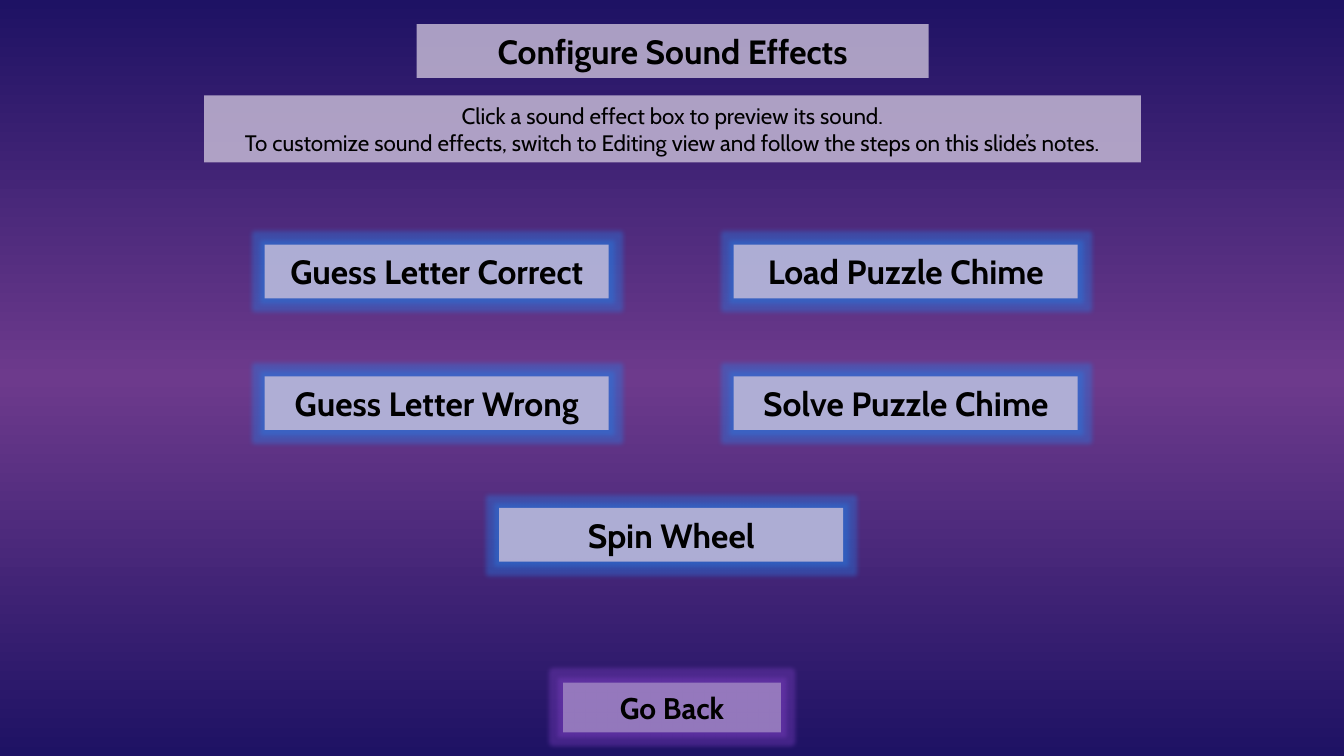
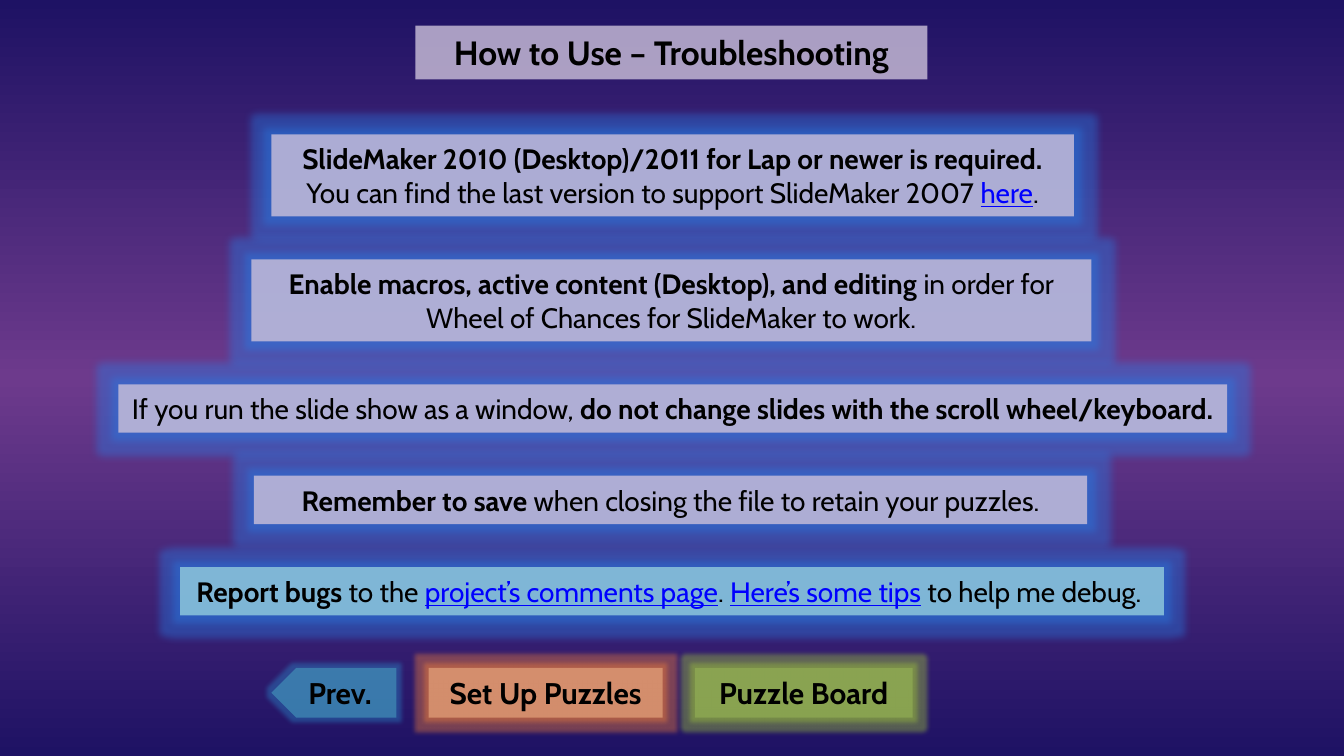
from lxml.etree import SubElement
from pptx import Presentation
from pptx.dml.color import RGBColor
from pptx.enum.shapes import MSO_SHAPE
from pptx.enum.text import MSO_ANCHOR, MSO_AUTO_SIZE, PP_ALIGN
from pptx.oxml.ns import qn
from pptx.util import Inches, Pt

FONT = "Cabin"
COLORS = {
    "night": "1E1264", "plum": "6D3A8C",
    "lilac": "CCC1DA", "sky": "93CDDD", "teal": "4BACC6",
    "peach": "FAC090", "green": "9BBB59",
    "text": "000000", "link": "0000FF",
    "blue_glow": "267DE6", "teal_glow": "2A90D0", "purple_glow": "7C3FC0",
    "orange_glow": "F98438", "green_glow": "A5CE37",
}
GLOW_OPACITY = 40
RUN_STYLES = {
    "plain": {"bold": False},
    "bold": {"bold": True},
    "link": {"bold": False, "underline": True},
}
FRAME_FORMAT = {
    "word_wrap": True,
    "vertical_anchor": MSO_ANCHOR.MIDDLE,
    "auto_size": MSO_AUTO_SIZE.NONE,
}


def set_opacity(color_element, percent):
    SubElement(color_element, qn("a:alpha"), val=str(percent * 1000))


def add_color(parent, name):
    return SubElement(parent, qn("a:srgbClr"), val=COLORS[name])


def set_background(master):
    """Vertical gradient shared by all slides."""
    fill = master.background.fill
    fill.gradient()
    fill.gradient_angle = 270
    stops = master._element.find(".//" + qn("a:gsLst"))
    for stop in list(stops):
        stops.remove(stop)
    for position, name in ((0, "night"), (50, "plum"), (100, "night")):
        add_color(SubElement(stops, qn("a:gs"), pos=str(position * 1000)), name)


def fill_box(shape, color, opacity):
    shape.fill.solid()
    shape.fill.fore_color.rgb = RGBColor.from_string(COLORS[color])
    set_opacity(shape._element.spPr.find(".//" + qn("a:srgbClr")), opacity)
    shape.line.fill.background()


def write_text(shape, paragraphs, size):
    """Each paragraph is a list of (text, style) runs."""
    frame = shape.text_frame
    for name, value in FRAME_FORMAT.items():
        setattr(frame, name, value)
    for index, runs in enumerate(paragraphs):
        paragraph = frame.paragraphs[0] if index == 0 else frame.add_paragraph()
        paragraph.alignment = PP_ALIGN.CENTER
        for text, style in runs:
            run = paragraph.add_run()
            run.text = text
            font_format = {"name": FONT, "size": Pt(size), **RUN_STYLES[style]}
            for name, value in font_format.items():
                setattr(run.font, name, value)
            color = "link" if style == "link" else "text"
            run.font.color.rgb = RGBColor.from_string(COLORS[color])


def add_box(slide, box, paragraphs, size, color="lilac", opacity=80,
            glow=None, radius=5, kind=MSO_SHAPE.RECTANGLE):
    shape = slide.shapes.add_shape(kind, *map(Inches, box))
    shape.shadow.inherit = False
    fill_box(shape, color, opacity)
    if glow:
        effects = shape._element.spPr.find(qn("a:effectLst"))
        halo = SubElement(effects, qn("a:glow"), rad=str(Pt(radius)))
        set_opacity(add_color(halo, glow), GLOW_OPACITY)
    write_text(shape, paragraphs, size)
    return shape


def add_titled_slide(presentation, text, left, top):
    slide = presentation.slides.add_slide(presentation.slide_layouts[5])
    title = slide.shapes.title
    title.left, title.top = Inches(left), Inches(top)
    title.width, title.height = Inches(3.81), Inches(0.4)
    fill_box(title, "lilac", 80)
    write_text(title, [[(text, "bold")]], 18)
    return slide


def add_sound_grid(slide, left, top):
    """Two columns of sound boxes with one centred below."""
    column_step, row_step = 3.49, 0.98
    sounds = (
        ("Spin Wheel", 0.5, 2),
        ("Guess Letter Correct", 0, 0), ("Guess Letter Wrong", 0, 1),
        ("Load Puzzle Chime", 1, 0), ("Solve Puzzle Chime", 1, 1),
    )
    for text, column, row in sounds:
        box = (left + column * column_step, top + row * row_step, 2.56, 0.4)
        add_box(slide, box, [[(text, "bold")]], 18, glow="blue_glow")


def build_sound_slide(presentation):
    slide = add_titled_slide(presentation, "Configure Sound Effects", 3.1, 0.18)
    # Instructions
    add_box(slide, (1.52, 0.71, 6.97, 0.5), [
        [("Click a sound effect box to preview its sound.", "plain")],
        [("To customize sound effects, switch to Editing view and follow "
          "the steps on this slide’s notes.", "plain")],
    ], 12)
    # Navigation
    add_box(slide, (4.19, 5.08, 1.62, 0.37), [[("Go Back", "bold")]], 16,
            opacity=50, glow="purple_glow")
    add_sound_grid(slide, 1.97, 1.82)


def add_tips(slide, top):
    """Stack of tips with equal gaps."""
    gap = 0.32
    tips = (
        (2.02, 5.97, 0.61, "lilac", [
            [("SlideMaker 2010 (Desktop)/2011 for Lap or newer is required.", "bold")],
            [("You can find the last version to support SlideMaker 2007 ", "plain"),
             ("here", "link"), (".", "plain")],
        ]),
        (1.87, 6.25, 0.61, "lilac", [
            [("Enable macros, active content (Desktop), and editing", "bold"),
             (" in order for Wheel of Chances for SlideMaker to work.", "plain")],
        ]),
        (0.88, 8.25, 0.36, "lilac", [
            [("If you run the slide show as a window, ", "plain"),
             ("do not change slides with the scroll wheel/keyboard.", "bold")],
        ]),
        (1.89, 6.2, 0.36, "lilac", [
            [("Remember to save", "bold"),
             (" when closing the file to retain your puzzles.", "plain")],
        ]),
        (1.34, 7.32, 0.36, "sky", [
            [("Report bugs ", "bold"), ("to the ", "plain"),
             ("project’s comments page", "link"), (". ", "plain"),
             ("Here’s some tips", "link"), (" to help me debug. ", "plain")],
        ]),
    )
    for left, width, height, color, paragraphs in tips:
        add_box(slide, (left, top, width, height), paragraphs, 15, color,
                glow="blue_glow", radius=8)
        top += height + gap


def add_navigation(slide, left, top):
    """Row of buttons, the first one an arrow pointing left."""
    gap = 0.24
    buttons = (
        ("Puzzle Board", 1.62, "green", "green_glow", MSO_SHAPE.RECTANGLE),
        ("Set Up Puzzles", 1.74, "peach", "orange_glow", MSO_SHAPE.RECTANGLE),
        ("Prev.", 0.93, "teal", "teal_glow", MSO_SHAPE.PENTAGON),
    )
    # Placed from the right end of the row
    right = left + sum(button[1] for button in buttons) + gap * (len(buttons) - 1)
    for text, width, color, glow, kind in buttons:
        button = add_box(slide, (right - width, top, width, 0.37),
                         [[(text, "bold")]], 16, color, 50, glow, kind=kind)
        if kind == MSO_SHAPE.PENTAGON:
            button._element.spPr.find(qn("a:xfrm")).set("flipH", "1")
        right -= width + gap


def build_troubleshooting_slide(presentation):
    slide = add_titled_slide(presentation, "How to Use – Troubleshooting", 3.09, 0.19)
    add_tips(slide, 1)
    add_navigation(slide, 2.02, 4.97)


def main():
    presentation = Presentation()
    presentation.slide_width = Inches(10)
    presentation.slide_height = Inches(10 * 9 / 16)
    set_background(presentation.slide_master)
    build_sound_slide(presentation)
    build_troubleshooting_slide(presentation)
    presentation.save("out.pptx")


if __name__ == "__main__":
    main()
